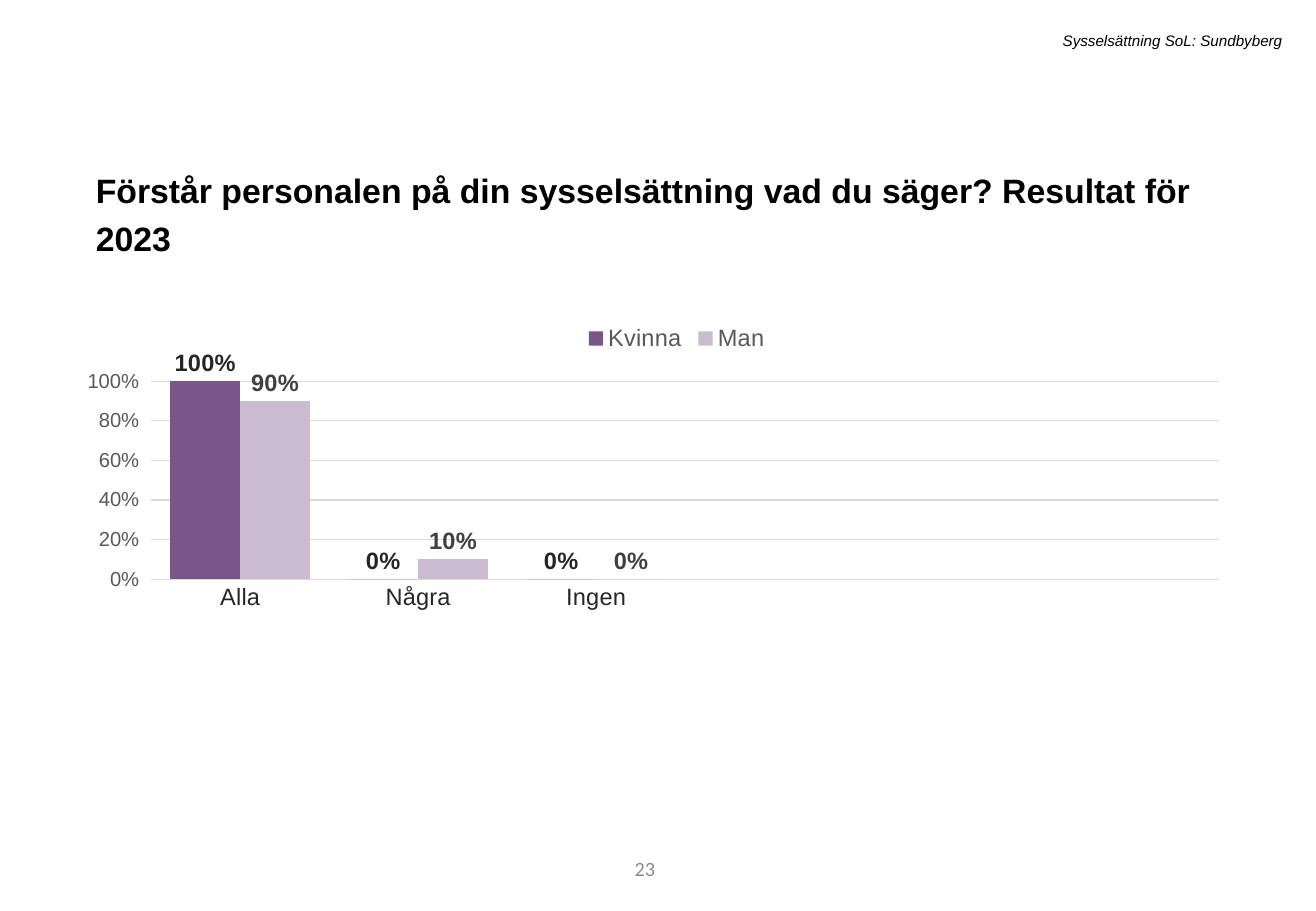
from dataclasses import dataclass

from pptx import Presentation
from pptx.chart.data import CategoryChartData
from pptx.dml.color import RGBColor as RGB
from pptx.enum.chart import XL_CHART_TYPE as ChartType
from pptx.enum.chart import XL_LABEL_POSITION as LabelPos
from pptx.enum.chart import XL_LEGEND_POSITION as LegendPos
from pptx.enum.chart import XL_TICK_MARK as Tick
from pptx.enum.text import MSO_ANCHOR as Anchor
from pptx.enum.text import PP_ALIGN as Align
from pptx.oxml import parse_xml
from pptx.oxml.ns import nsdecls
from pptx.util import Inches, Pt


@dataclass(frozen=True)
class Theme:
    font: str = "Arial"
    number_font: str = "Calibri"
    black: str = "000000"
    dark: str = "262626"
    label: str = "404040"
    grey: str = "595959"
    page: str = "8C8C8C"
    grid: str = "D9D9D9"
    purple: str = "7A5589"
    lilac: str = "CABBD0"
    title_size: int = 20
    label_size: int = 14
    axis_size: int = 12
    base_size: int = 10
    header_size: int = 9


T = Theme()


@dataclass(frozen=True)
class Box:
    left: float
    top: float
    width: float
    height: float

    def emu(self) -> tuple:
        return tuple(Inches(v) for v in (self.left, self.top, self.width, self.height))


@dataclass(frozen=True)
class Label:
    text: str
    box: Box
    size: int
    color: str = T.black
    font: str = T.font
    bold: bool = False
    italic: bool = False
    align: Align = Align.LEFT
    anchor: Anchor = Anchor.TOP
    line_spacing: float = 1.0
    space_before: int = 0


@dataclass(frozen=True)
class Series:
    name: str
    values: tuple
    color: str
    label_color: str


LABELS = [
    Label("23", Box(3.05, 6.95, 2.44, 0.4), T.axis_size, T.page, T.number_font,
          align=Align.RIGHT, anchor=Anchor.MIDDLE),
    Label("Förstår personalen på din sysselsättning vad du säger? Resultat för 2023",
          Box(0.69, 1.28, 9.4, 0.47), T.title_size, bold=True,
          line_spacing=1.2, space_before=10),
    Label("Sysselsättning SoL: Sundbyberg", Box(1.79, 0.21, 8.86, 0.25),
          T.header_size, italic=True, align=Align.RIGHT),
]

CHART_BOX = Box(0.72, 2.53, 9.4, 3.95)
# Fractions of the chart area
PLOT_AREA = Box(0.054, 0.154, 0.937, 0.413)
LEGEND_AREA = Box(0.43, 0.02, 0.17, 0.09)
CATEGORIES = ["Alla", "Några", "Ingen", "", "", ""]
SERIES = [
    Series("Kvinna", (1, 0, 0), T.purple, T.dark),
    Series("Man", (0.9, 0.1, 0), T.lilac, T.label),
]


def set_font(font, size: int, color: str, name: str = T.font,
             bold: bool = False, italic: bool = False) -> None:
    font.name, font.size = name, Pt(size)
    font.bold, font.italic = bold, italic
    font.color.rgb = RGB.from_string(color)


def set_line(line) -> None:
    line.color.rgb = RGB.from_string(T.grid)
    line.width = Pt(0.75)


def add_label(slide, label: Label) -> None:
    tf = slide.shapes.add_textbox(*label.box.emu()).text_frame
    tf.word_wrap = True
    tf.vertical_anchor = label.anchor
    p = tf.paragraphs[0]
    p.text = label.text
    p.alignment = label.align
    p.line_spacing = label.line_spacing
    p.space_before = Pt(label.space_before)
    set_font(p.font, label.size, label.color, label.font, label.bold, label.italic)


def set_layout(parent, index: int, area: Box, inner: bool = False) -> None:
    """Place a chart part by fractions of the chart area."""
    for old in parent.xpath("./c:layout"):
        parent.remove(old)
    target = '<c:layoutTarget val="inner"/>' if inner else ""
    parent.insert(index, parse_xml(
        f'<c:layout {nsdecls("c")}><c:manualLayout>{target}'
        '<c:xMode val="edge"/><c:yMode val="edge"/>'
        f'<c:x val="{area.left}"/><c:y val="{area.top}"/>'
        f'<c:w val="{area.width}"/><c:h val="{area.height}"/>'
        '</c:manualLayout></c:layout>'))


def add_result_chart(slide) -> None:
    data = CategoryChartData(number_format="0%")
    data.categories = CATEGORIES
    for s in SERIES:
        data.add_series(s.name, s.values + (None,) * (len(CATEGORIES) - len(s.values)))
    chart = slide.shapes.add_chart(
        ChartType.COLUMN_CLUSTERED, *CHART_BOX.emu(), data).chart
    chart.has_title = False
    set_font(chart.font, T.base_size, T.black)

    # Legend and plot placement
    chart.has_legend = True
    chart.legend.position = LegendPos.TOP
    chart.legend.include_in_layout = False
    set_font(chart.legend.font, T.label_size, T.grey)
    set_layout(chart.element.xpath(".//c:legend")[0], 1, LEGEND_AREA)
    set_layout(chart.element.xpath(".//c:plotArea")[0], 0, PLOT_AREA, inner=True)

    # Axes
    cat = chart.category_axis
    cat.major_tick_mark = cat.minor_tick_mark = Tick.NONE
    set_font(cat.tick_labels.font, T.label_size, T.dark)
    set_line(cat.format.line)
    val = chart.value_axis
    val.minimum_scale, val.maximum_scale, val.major_unit = 0, 1, 0.2
    val.major_tick_mark, val.minor_tick_mark = Tick.OUTSIDE, Tick.NONE
    val.format.line.fill.background()
    set_line(val.major_gridlines.format.line)
    val.tick_labels.number_format = "0%"
    val.tick_labels.number_format_is_linked = False
    set_font(val.tick_labels.font, T.axis_size, T.grey)

    # Columns and their values
    plot = chart.plots[0]
    plot.gap_width, plot.overlap = 55, 0
    plot.vary_by_categories = False
    for s, column in zip(SERIES, plot.series):
        column.format.fill.solid()
        column.format.fill.fore_color.rgb = RGB.from_string(s.color)
        labels = column.data_labels
        labels.show_value = True
        labels.position = LabelPos.OUTSIDE_END
        labels.number_format = "0%"
        labels.number_format_is_linked = False
        set_font(labels.font, T.label_size, s.label_color, bold=True)


def main() -> None:
    prs = Presentation()
    prs.slide_width, prs.slide_height = Inches(10.83), Inches(7.5)
    slide = prs.slides.add_slide(prs.slide_layouts[6])
    add_result_chart(slide)
    for label in LABELS:
        add_label(slide, label)
    prs.save("out.pptx")


if __name__ == "__main__":
    main()
